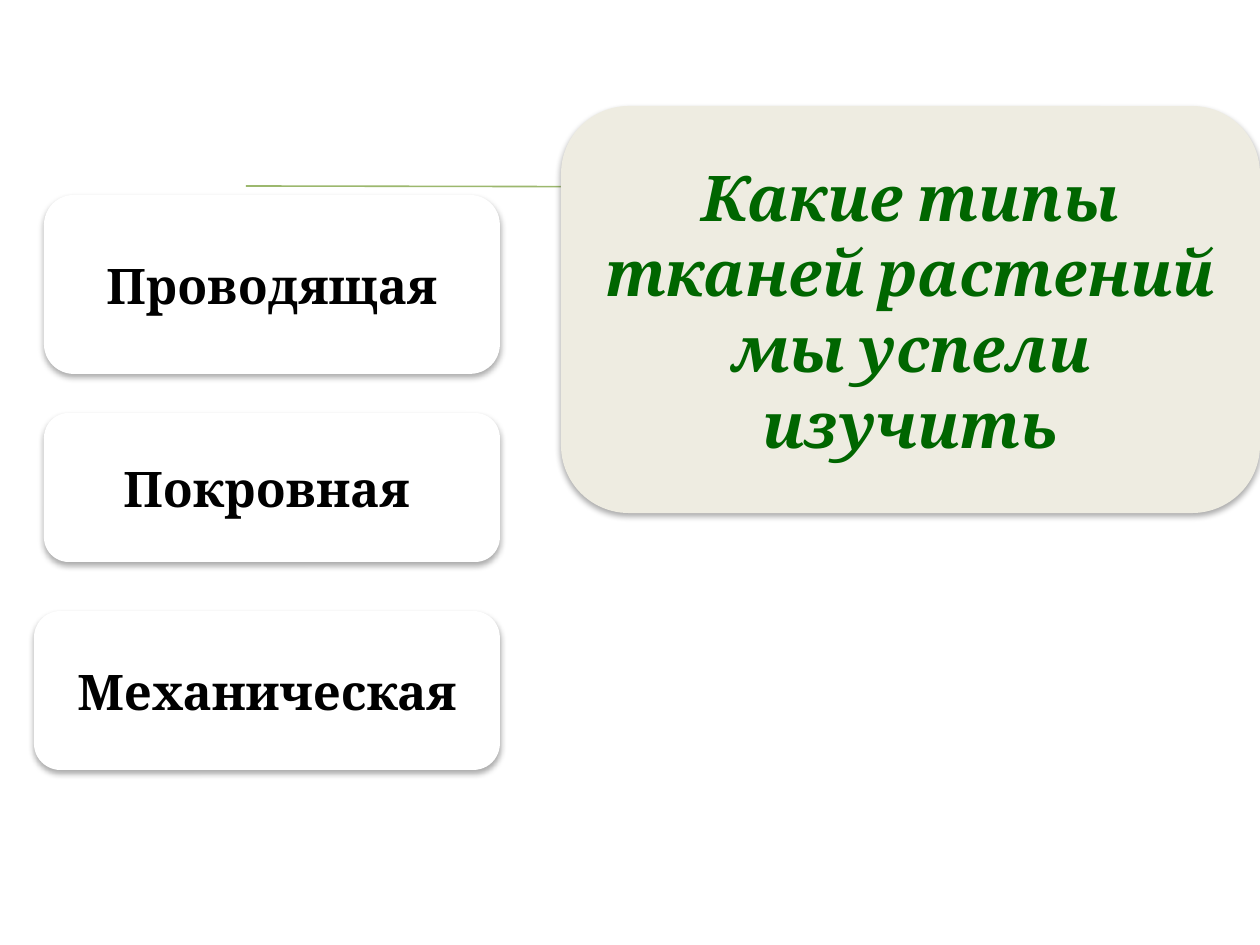
from lxml.etree import SubElement
from pptx import Presentation
from pptx.dml.color import RGBColor
from pptx.enum.shapes import MSO_CONNECTOR, MSO_SHAPE
from pptx.enum.text import MSO_ANCHOR, PP_ALIGN
from pptx.oxml.ns import qn
from pptx.util import Emu, Pt

FONT = "Cambria"
COLORS = {"rule": "9CB86E", "sand": "EEECE1", "white": "FFFFFF",
          "green": "006600", "black": "000000"}

# Content: text and box (left, top, width, height) in px
TITLE = ("Какие типы тканей растений мы успели изучить", (561, 106, 699, 407))
TISSUES = [
    ("Проводящая", (44, 195, 456, 179)),
    ("Покровная ", (44, 413, 456, 149)),
    ("Механическая", (34, 611, 466, 159)),
]
RULE = (246, 186, 1260, 188)


def px(n):
    return Emu(round(n * 914400 / 126))


def color(name):
    return RGBColor.from_string(COLORS[name])


def add_shadow(shape):
    shape.shadow.inherit = False
    effects = shape._element.spPr.find(qn("a:effectLst"))
    outer = SubElement(effects, qn("a:outerShdw"), blurRad=str(Pt(3.5)),
                       dist=str(Pt(2.2)), dir="5400000", rotWithShape="0")
    shade = SubElement(outer, qn("a:srgbClr"), val=COLORS["black"])
    SubElement(shade, qn("a:alpha"), val="32000")


def add_card(slide, text, box, fill, ink, size, italic=False):
    card = slide.shapes.add_shape(MSO_SHAPE.ROUNDED_RECTANGLE, *map(px, box))
    card.fill.solid()
    card.fill.fore_color.rgb = color(fill)
    card.line.fill.background()
    add_shadow(card)
    frame = card.text_frame
    frame.word_wrap = True
    frame.vertical_anchor = MSO_ANCHOR.MIDDLE
    frame.text = text
    para = frame.paragraphs[0]
    para.alignment = PP_ALIGN.CENTER
    font = para.runs[0].font
    font.name, font.size = FONT, Pt(size)
    font.bold, font.italic = True, italic
    font.color.rgb = color(ink)


def main():
    deck = Presentation()
    deck.slide_width, deck.slide_height = px(1260), px(945)
    slide = deck.slides.add_slide(deck.slide_layouts[6])

    # Rule behind the cards
    rule = slide.shapes.add_connector(MSO_CONNECTOR.STRAIGHT, *map(px, RULE))
    rule.line.color.rgb = color("rule")
    rule.line.width = Pt(0.9)
    SubElement(rule._element.spPr, qn("a:effectLst"))

    # Question, then the tissue types
    add_card(slide, *TITLE, "sand", "green", 36, italic=True)
    for text, box in TISSUES:
        add_card(slide, text, box, "white", "black", 28)

    deck.save("out.pptx")


if __name__ == "__main__":
    main()
